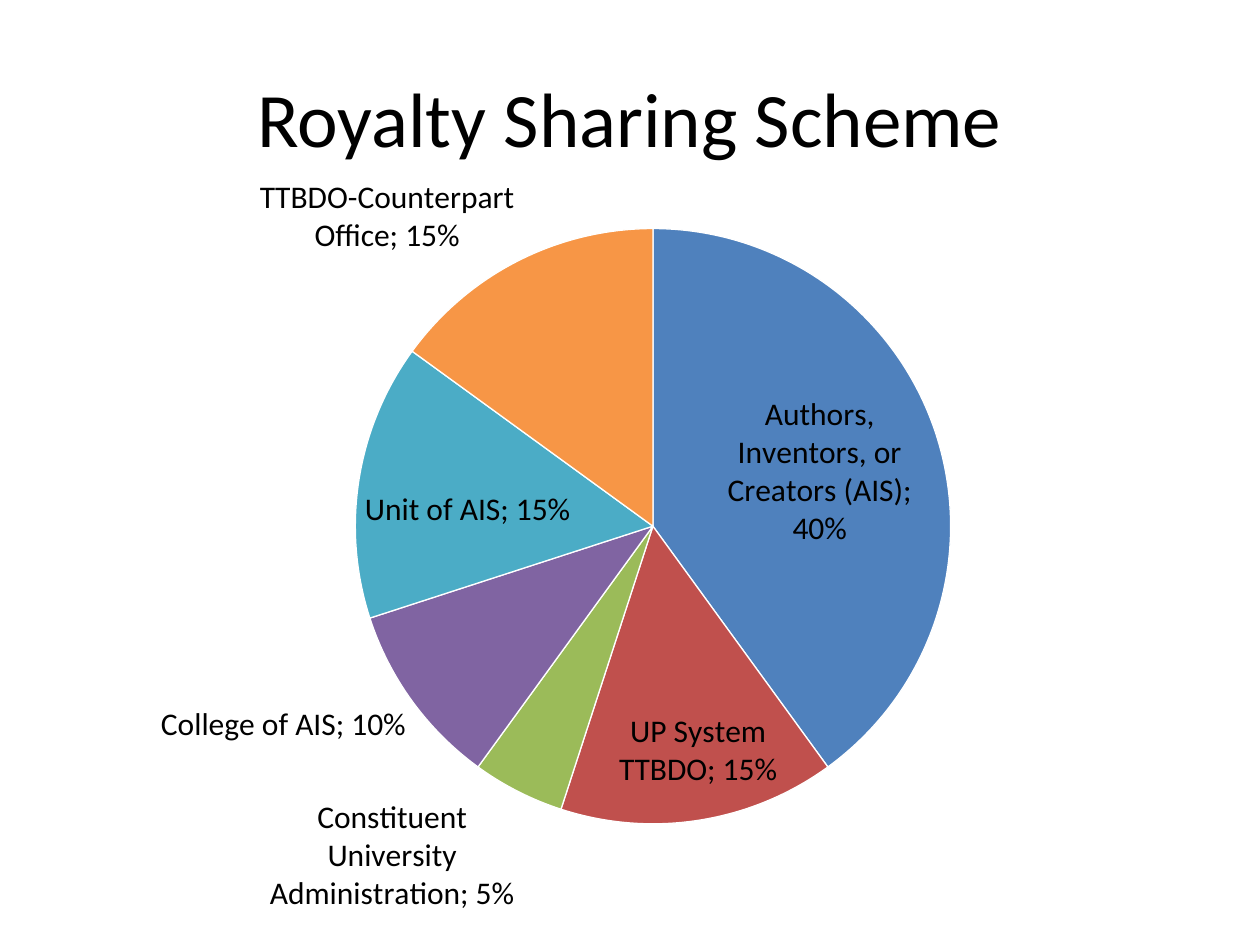
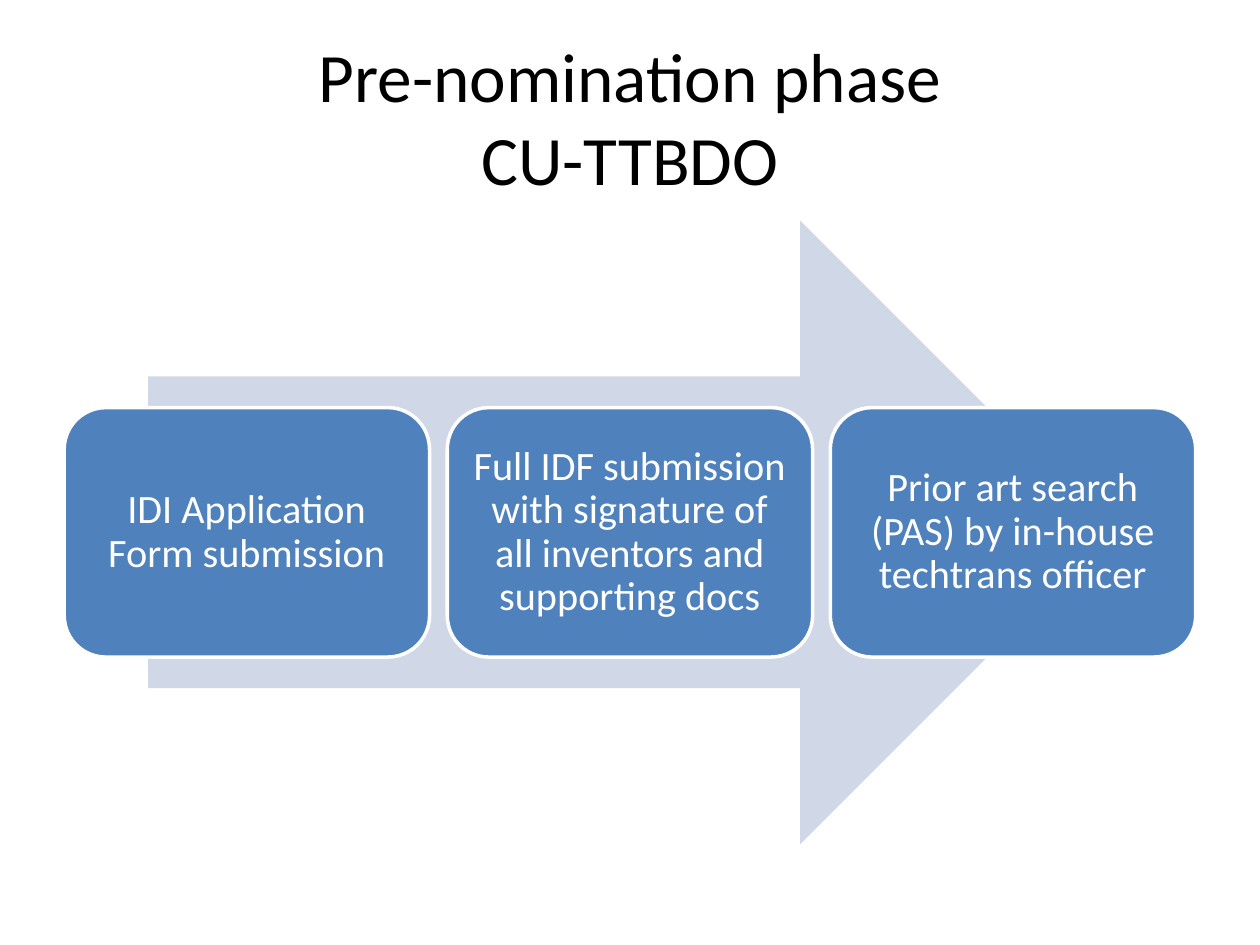
import pptx
import pptx.chart.data
import pptx.dml.color
import pptx.enum.chart
import pptx.enum.shapes
import pptx.enum.text
import pptx.oxml
import pptx.oxml.ns
import pptx.util

COLS, ROWS = 100, 75
CELL = pptx.util.Inches(0.1)
FONT = "Calibri"
HEX = {
    "ink": "000000", "paper": "FFFFFF", "arrow": "D0D8E8",
    "blue": "4F81BD", "red": "C0504D", "green": "9BBB59",
    "plum": "8064A2", "teal": "4BACC6", "gold": "F79646",
}
TITLE = (5, 3, 90, 12.5)
PIE = (-3.3, 11.7, 105, 63.3)
FLOW = (5, 17.5, 90, 49.5)

SHARES = [
    ("Authors, Inventors, or Creators (AIS)", 0.4, "blue"),
    ("UP System TTBDO", 0.15, "red"),
    ("Constituent University Administration", 0.05, "green"),
    ("College of AIS", 0.1, "plum"),
    ("Unit of AIS", 0.15, "teal"),
    ("TTBDO-Counterpart Office", 0.15, "gold"),
]
STEPS = [
    "IDI Application Form submission",
    "Full IDF submission with signature of all inventors and supporting docs",
    "Prior art search (PAS) by in-house techtrans officer",
]


def color(name):
    return pptx.dml.color.RGBColor.from_string(HEX[name])


def place(box):
    """Turn a box in grid cells into lengths."""
    return [round(n * CELL) for n in box]


def style(font, size, name):
    font.name = FONT
    font.size = pptx.util.Pt(size)
    font.color.rgb = color(name)


def write(shape, text, size, name, space=1.0):
    """Set centred, wrapped text in the middle of a shape."""
    frame = shape.text_frame
    frame.word_wrap = True
    frame.vertical_anchor = pptx.enum.text.MSO_ANCHOR.MIDDLE
    para = frame.paragraphs[0]
    para.text = text
    para.alignment = pptx.enum.text.PP_ALIGN.CENTER
    para.line_spacing = space
    style(para.font, size, name)
    return frame


def draw(slide, kind, box, fill):
    shape = slide.shapes.add_shape(kind, *place(box))
    shape.shadow.inherit = False
    shape.fill.solid()
    shape.fill.fore_color.rgb = color(fill)
    shape.line.fill.background()
    return shape


def add_page(deck, title, size):
    slide = deck.slides.add_slide(deck.slide_layouts[6])
    slide.background.fill.solid()
    slide.background.fill.fore_color.rgb = color("paper")
    write(slide.shapes.add_textbox(*place(TITLE)), title, size, "ink")
    return slide


def fix_plot(chart, left, top, wide, high):
    """Fix the inner plot area, in shares of the chart."""
    area = chart.plots[0].series[0]._element.getparent().getparent()
    for old in area.findall(pptx.oxml.ns.qn("c:layout")):
        area.remove(old)
    sizes = "".join(
        f'<c:{tag} val="{val}"/>'
        for tag, val in zip("xywh", (left, top, wide, high))
    )
    area.insert(0, pptx.oxml.parse_xml(
        f'<c:layout {pptx.oxml.ns.nsdecls("c")}><c:manualLayout>'
        '<c:layoutTarget val="inner"/><c:xMode val="edge"/>'
        f'<c:yMode val="edge"/>{sizes}</c:manualLayout></c:layout>'
    ))


def add_pie(slide, box):
    data = pptx.chart.data.CategoryChartData(number_format="0%")
    names, vals, fills = zip(*SHARES)
    data.categories = names
    data.add_series("Series 1", vals)
    kind = pptx.enum.chart.XL_CHART_TYPE.PIE
    chart = slide.shapes.add_chart(kind, *place(box), data).chart
    chart.has_title = False
    chart.has_legend = False
    style(chart.font, 18, "ink")
    chart.plots[0].vary_by_categories = True
    series = chart.plots[0].series[0]
    for i, fill in enumerate(fills):
        form = series.points[i].format
        form.fill.solid()
        form.fill.fore_color.rgb = color(fill)
        form.line.color.rgb = color("paper")
        form.line.width = pptx.util.Pt(0.75)
    tags = series.data_labels
    tags.show_value = True
    tags.show_category_name = True
    tags.show_percentage = False
    tags.number_format = "0%"
    tags.number_format_is_linked = False
    tags.position = pptx.enum.chart.XL_LABEL_POSITION.BEST_FIT
    style(tags.font, 18, "ink")
    mark = pptx.oxml.parse_xml(
        f'<c:separator {pptx.oxml.ns.nsdecls("c")}>; </c:separator>'
    )
    tags._element.find(pptx.oxml.ns.qn("c:showBubbleSize")).addnext(mark)
    fix_plot(chart, 0.3, 0.1, 0.45, 0.75)


def add_flow(slide, box):
    """Lay the steps in a row across one wide arrow."""
    left, top, wide, high = box
    kinds = pptx.enum.shapes.MSO_SHAPE
    draw(slide, kinds.RIGHT_ARROW,
         (left + 0.075 * wide, top, 0.85 * wide, high), "arrow")
    card, gap = 29, 1.4
    count = len(STEPS)
    start = left + (wide - count * card - (count - 1) * gap) / 2
    for i, text in enumerate(STEPS):
        spot = (start + i * (card + gap), top + 0.3 * high, card, 0.4 * high)
        shape = draw(slide, kinds.ROUNDED_RECTANGLE, spot, "blue")
        shape.line.color.rgb = color("paper")
        shape.line.width = pptx.util.Pt(2)
        frame = write(shape, text, 23, "paper", 0.9)
        frame.margin_left = frame.margin_right = CELL
        frame.margin_top = frame.margin_bottom = CELL


def main():
    deck = pptx.Presentation()
    deck.slide_width, deck.slide_height = COLS * CELL, ROWS * CELL
    add_pie(add_page(deck, "Royalty Sharing Scheme", 44), PIE)
    add_flow(add_page(deck, "Pre-nomination phase\vCU-TTBDO", 39.6), FLOW)
    deck.save("out.pptx")


if __name__ == "__main__":
    main()
